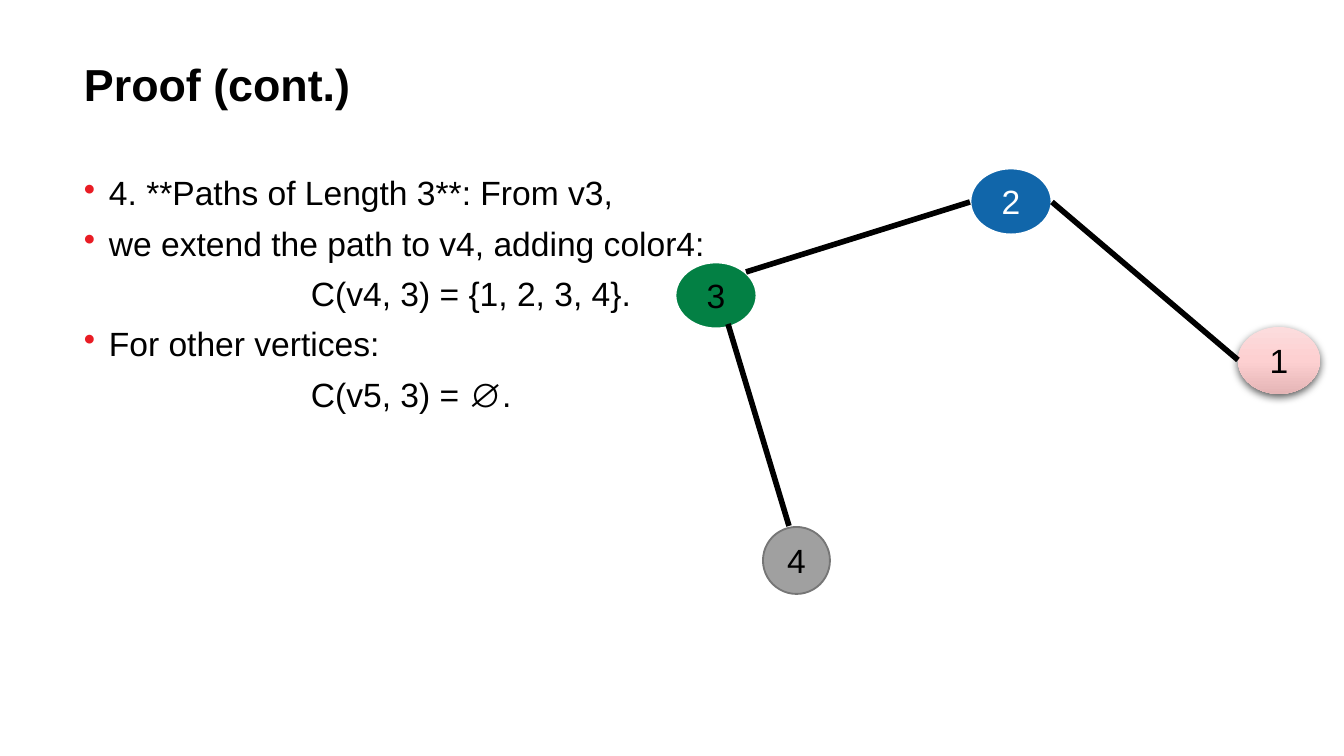
import copy

import pptx
import pptx.dml.color
import pptx.enum.shapes
import pptx.enum.text
import pptx.oxml
import pptx.oxml.ns
import pptx.util

RGB = pptx.dml.color.RGBColor
ALIGN = pptx.enum.text.PP_ALIGN
ANCHOR = pptx.enum.text.MSO_ANCHOR
qn = pptx.oxml.ns.qn

BLACK = RGB(0x00, 0x00, 0x00)
WHITE = RGB(0xFF, 0xFF, 0xFF)
BULLET_RED = RGB(0xE9, 0x1C, 0x24)
GREEN = RGB(0x03, 0x80, 0x44)
BLUE = RGB(0x11, 0x66, 0xAA)
GREY = RGB(0xA0, 0xA0, 0xA0)
GREY_EDGE = RGB(0x76, 0x76, 0x76)
PINKS = [(0, RGB(0xFC, 0xDC, 0xDD)), (0.5, RGB(0xFD, 0xD0, 0xD1)), (1, RGB(0xE5, 0xB5, 0xB6))]

EMU_PER_PX = 914400 / 134.4
HANG = 25
FORMULA_INDENT = 227


def px(length):
    return pptx.util.Emu(round(length * EMU_PER_PX))


def write(paragraph, text, size=18, color=BLACK, bold=False, align=ALIGN.LEFT,
          spacing=None, before=0, indent=0, bullet=False):
    """Fill one paragraph with formatted text."""
    props = paragraph._p.get_or_add_pPr()
    if indent:
        props.set("marL", str(px(indent)))
    if bullet:
        props.set("indent", str(-px(HANG)))
        bullet_color = pptx.oxml.parse_xml(
            f'<a:buClr {pptx.oxml.ns.nsdecls("a")}><a:srgbClr val="{BULLET_RED}"/></a:buClr>')
        bullet_char = pptx.oxml.parse_xml(
            f'<a:buChar {pptx.oxml.ns.nsdecls("a")} char="•"/>')
        props.extend([bullet_color, bullet_char])
    paragraph.alignment = align
    paragraph.line_spacing = spacing
    paragraph.space_before = pptx.util.Pt(before)
    run = paragraph.add_run()
    run.text = text
    run.font.name = "Arial"
    run.font.size = pptx.util.Pt(size)
    run.font.bold = bold
    run.font.color.rgb = color


def add_text_frame(slide, left, top, width, height):
    frame = slide.shapes.add_textbox(px(left), px(top), px(width), px(height)).text_frame
    frame.word_wrap = True
    frame.margin_left = frame.margin_right = frame.margin_top = frame.margin_bottom = 0
    return frame


def add_vertex(slide, label, left, top, width=82, fill=None, edge=None,
               edge_width=1.5, color=BLACK):
    vertex = slide.shapes.add_shape(
        pptx.enum.shapes.MSO_SHAPE.FLOWCHART_CONNECTOR, px(left), px(top), px(width), px(67))
    vertex.shadow.inherit = False
    if fill is not None:
        vertex.fill.solid()
        vertex.fill.fore_color.rgb = fill
    if edge is None:
        vertex.line.fill.background()
    else:
        vertex.line.color.rgb = edge
        vertex.line.width = pptx.util.Pt(edge_width)
    vertex.text_frame.vertical_anchor = ANCHOR.MIDDLE
    write(vertex.text_frame.paragraphs[0], label, color=color, align=ALIGN.CENTER)
    return vertex


def shade(vertex, stops):
    """Give a vertex a downward gradient and a soft shadow."""
    vertex.fill.gradient()
    vertex.fill.gradient_angle = 270
    stop_list = vertex._element.spPr.find(".//" + qn("a:gsLst"))
    stop_list.append(copy.deepcopy(stop_list[0]))
    for stop, (position, color) in zip(vertex.fill.gradient_stops, stops):
        stop.position = position
        stop.color.rgb = color
    vertex._element.spPr.find(qn("a:effectLst")).append(pptx.oxml.parse_xml(
        f'<a:outerShdw {pptx.oxml.ns.nsdecls("a")} blurRad="57150" dist="19050" '
        'dir="5400000" algn="ctr" rotWithShape="0"><a:srgbClr val="000000">'
        '<a:alpha val="63000"/></a:srgbClr></a:outerShdw>'))


def add_edge(slide, start, end):
    edge = slide.shapes.add_connector(
        pptx.enum.shapes.MSO_CONNECTOR.STRAIGHT, *map(px, start + end))
    edge.line.color.rgb = BLACK
    edge.line.width = pptx.util.Pt(3)
    edge._element.spPr.append(pptx.oxml.parse_xml(
        f'<a:effectLst {pptx.oxml.ns.nsdecls("a")}/>'))


def main():
    deck = pptx.Presentation()
    deck.slide_width, deck.slide_height = px(1344), px(756)
    slide = deck.slides.add_slide(deck.slide_layouts[6])

    # Proof steps; formulas are indented and carry no bullet
    steps = [
        ("4. **Paths of Length 3**: From v3,", True),
        ("we extend the path to v4, adding color4:", True),
        ("C(v4, 3) = {1, 2, 3, 4}.", False),
        ("For other vertices:", True),
        ("C(v5, 3) = ∅.", False),
    ]
    proof = add_text_frame(slide, 84, 177, 1184, 458)
    for number, (step, bulleted) in enumerate(steps):
        paragraph = proof.add_paragraph() if number else proof.paragraphs[0]
        write(paragraph, step, spacing=0.9, before=7.5 if number else 0,
              indent=HANG if bulleted else FORMULA_INDENT, bullet=bulleted)

    # Title
    title = add_text_frame(slide, 84, 63, 1184, 106)
    write(title.paragraphs[0], "Proof (cont.)", size=24, bold=True, spacing=0.9)

    # Path through the coloured vertices
    add_vertex(slide, "3", 675, 262, fill=GREEN, edge=WHITE)
    add_vertex(slide, "2", 970, 168, fill=BLUE, edge=WHITE, color=WHITE)
    shade(add_vertex(slide, "1", 1238, 327), PINKS)
    add_edge(slide, (746, 272), (970, 202))
    add_edge(slide, (728, 324), (789, 526))
    add_edge(slide, (1238, 360), (1052, 202))
    add_vertex(slide, "4", 763, 527, width=67, fill=GREY, edge=GREY_EDGE, edge_width=1)

    deck.save("out.pptx")


if __name__ == "__main__":
    main()
